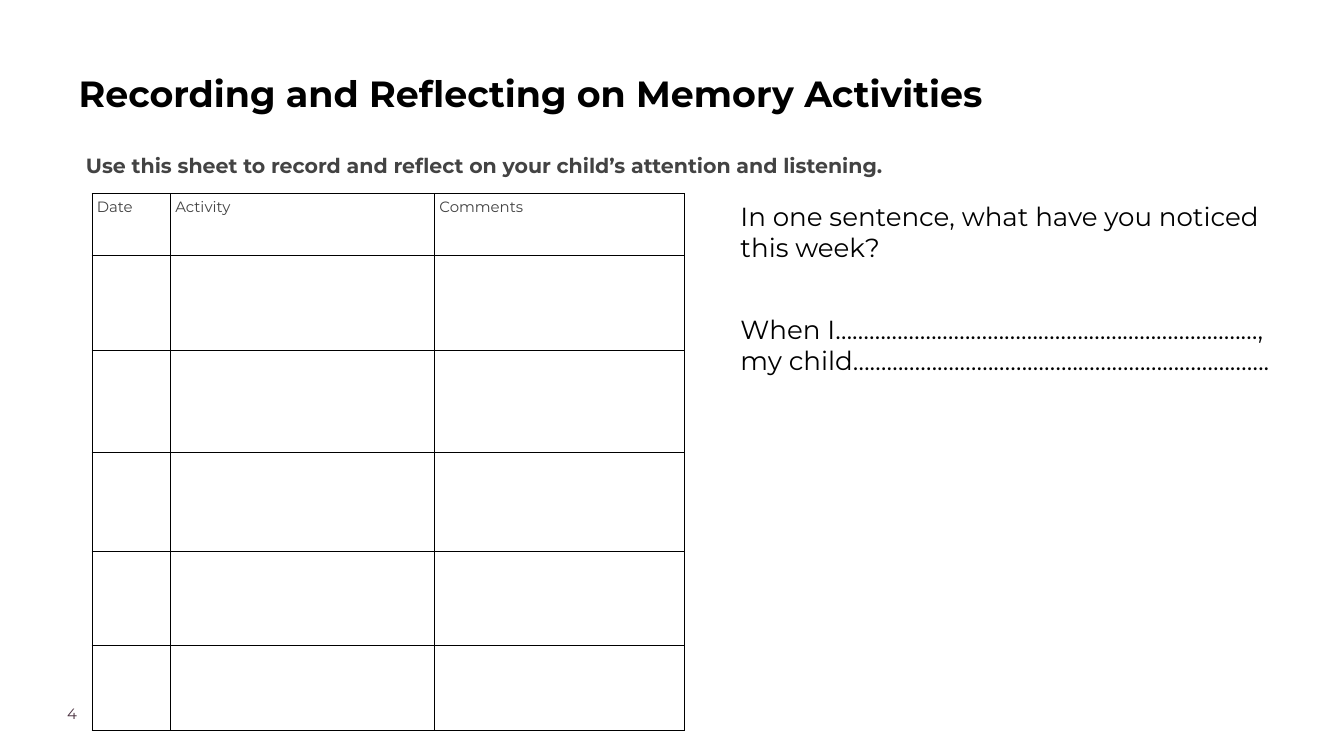
from lxml.etree import SubElement
from pptx import Presentation
from pptx.dml.color import RGBColor
from pptx.enum.text import MSO_ANCHOR
from pptx.oxml.ns import qn
from pptx.util import Cm, Pt

BLACK = RGBColor(0x00, 0x00, 0x00)
GREY = RGBColor(0x43, 0x43, 0x43)
PLUM = RGBColor(0x4B, 0x32, 0x41)
FONT = "Montserrat"


def set_font(p, size, color, bold=False):
    for key, value in {"name": FONT, "size": Pt(size), "bold": bold}.items():
        setattr(p.font, key, value)
    p.font.color.rgb = color


def add_text(s, box, lines, size, color, bold=False, inset=0.0, gap=0, spacing=None, anchor=MSO_ANCHOR.TOP):
    tf = s.shapes.add_textbox(*[Cm(v) for v in box]).text_frame
    frame = {"word_wrap": True, "vertical_anchor": anchor}
    frame.update({f"margin_{side}": Cm(inset) for side in ("left", "top", "right", "bottom")})
    for key, value in frame.items():
        setattr(tf, key, value)
    for i, line in enumerate(lines):
        p = tf.paragraphs[0] if i == 0 else tf.add_paragraph()
        p.add_run().text = line
        set_font(p, size, color, bold)
        if spacing:
            p.line_spacing = spacing
        if i:
            p.space_before = Pt(gap)


prs = Presentation()
prs.slide_width, prs.slide_height = Cm(50.8), Cm(28.58)
s = prs.slides.add_slide(prs.slide_layouts[6])

add_text(s, (2.97, 2.46, 45.29, 4.52), ["Recording and Reflecting on Memory Activities"],
         39, BLACK, bold=True, spacing=1.15)
add_text(s, (2.54, 26.62, 3.99, 0.99), ["4"], 16, PLUM)

headers = ["Date", "Activity", "Comments"]
widths = [2.97, 9.98, 9.42]
heights = [2.34, 3.58, 3.86, 3.73, 3.58, 3.2]
table = s.shapes.add_table(len(heights), len(widths), Cm(3.48), Cm(7.32),
                           Cm(sum(widths)), Cm(sum(heights))).table
table.first_row = False
table.horz_banding = False
for column, width in zip(table.columns, widths):
    column.width = Cm(width)
for row, height in zip(table.rows, heights):
    row.height = Cm(height)
for cell in table.iter_cells():
    for side in ("left", "top", "right", "bottom"):
        setattr(cell, f"margin_{side}", Cm(0.18))
    tcPr = cell._tc.get_or_add_tcPr()
    for tag in ("a:lnL", "a:lnR", "a:lnT", "a:lnB"):
        ln = SubElement(tcPr, qn(tag), w=str(Pt(1)))
        fill = SubElement(ln, qn("a:solidFill"))
        SubElement(fill, qn("a:srgbClr"), val=str(BLACK))
    cell.fill.background()
for i, header in enumerate(headers):
    p = table.cell(0, i).text_frame.paragraphs[0]
    p.add_run().text = header
    set_font(p, 16, GREY)

add_text(s, (3.0, 5.33, 43.03, 1.83),
         ["Use this sheet to record and reflect on your child’s attention and listening."],
         22, GREY, bold=True, inset=0.25, anchor=MSO_ANCHOR.MIDDLE)
add_text(s, (27.74, 7.32, 20.9, 17.22),
         ["In one sentence, what have you noticed this week?",
          "When I…………………………………………………………………, my child……………….………………………………………………."],
         28, BLACK, inset=0.25, gap=54)

prs.save("out.pptx")
